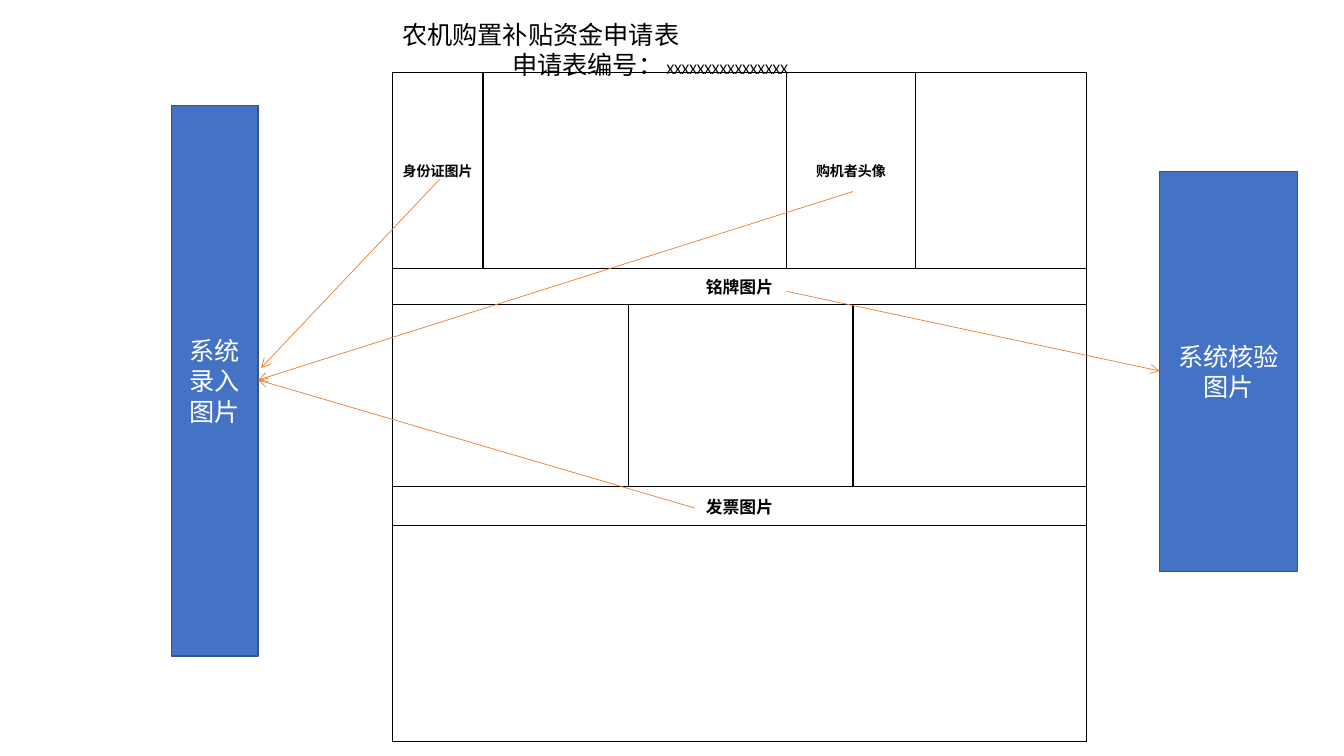
from lxml import etree
from pptx import Presentation
from pptx import util as u
from pptx.dml.color import RGBColor
from pptx.enum import shapes, text
from pptx.oxml.ns import qn

BLACK = RGBColor(0, 0, 0)
WHITE = RGBColor(255, 255, 255)
BLUE = RGBColor(0x44, 0x72, 0xC4)
NAVY = RGBColor(0x32, 0x54, 0x91)
ORANGE = RGBColor(0xED, 0x7D, 0x31)
FONT = "Noto Sans CJK SC"

TITLE_LINES = [
    (0, [("农机购置补贴资金申请表", 18, FONT)]),
    (1.09, [("申请表编号：", 18, FONT), (" XXXXXXXXXXXXXXXX", 10.5, "Calibri")]),
]
TITLE_BOX = (3.89, 0.14, 5.56, 0.58)
FORM_LEFT, FORM_TOP = 3.89, 0.72
COLUMNS = [0.9, 1.44, 1.57, 0.66, 0.62, 1.7]
ROWS = [1.94, 0.36, 1.81, 0.38, 2.15]
FORM_CELLS = [
    [("身份证图片", 1, 10), ("", 2, 10), ("购机者头像", 2, 10), ("", 1, 10)],
    [("铭牌图片", 6, 12)],
    [("", 2, 12), ("", 2, 12), ("", 2, 12)],
    [("发票图片", 6, 12)],
    [("", 6, 12)],
]
PANELS = [
    ("系统录入图片", (1.7, 1.05, 0.86, 5.46)),
    ("系统核验图片", (11.5, 1.7, 1.37, 3.97)),
]
ENTRY_POINT, CHECK_POINT = (2.56, 3.77), (11.5, 3.68)
ARROWS = [
    ((4.36, 1.78), (2.59, 3.65)),
    ((8.46, 1.9), ENTRY_POINT),
    ((6.89, 5.04), ENTRY_POINT),
    ((7.8, 2.89), CHECK_POINT),
]


def inches(values):
    return [u.Inches(v) for v in values]


def style_run(r, size, color, name=FONT, bold=False):
    r.font.size = u.Pt(size)
    r.font.name = name
    r.font.bold = bold
    r.font.color.rgb = color
    etree.SubElement(r._r.get_or_add_rPr(), qn("a:ea")).set("typeface", FONT)


def add_title(slide):
    tf = slide.shapes.add_textbox(*inches(TITLE_BOX)).text_frame
    tf.word_wrap = True
    for i, (indent, runs) in enumerate(TITLE_LINES):
        p = tf.add_paragraph() if i else tf.paragraphs[0]
        p.line_spacing = u.Pt(21.5)
        p._p.get_or_add_pPr().set("marL", str(u.Inches(indent)))
        for words, size, name in runs:
            r = p.add_run()
            r.text = words
            style_run(r, size, BLACK, name)


def add_borders(cell):
    tc_pr = cell._tc.get_or_add_tcPr()
    for i, side in enumerate(("lnL", "lnR", "lnT", "lnB")):
        ln = etree.Element(qn("a:" + side), w=str(u.Pt(1)))
        fill = etree.SubElement(ln, qn("a:solidFill"))
        etree.SubElement(fill, qn("a:srgbClr")).set("val", str(BLACK))
        tc_pr.insert(i, ln)


def add_form(slide):
    box = inches((FORM_LEFT, FORM_TOP, sum(COLUMNS), sum(ROWS)))
    table = slide.shapes.add_table(len(ROWS), len(COLUMNS), *box).table
    table.first_row = table.horz_banding = False
    for column, width in zip(table.columns, COLUMNS):
        column.width = u.Inches(width)
    for row, height in zip(table.rows, ROWS):
        row.height = u.Inches(height)
    for cell in table.iter_cells():
        cell.fill.background()
        add_borders(cell)
    for y, cells in enumerate(FORM_CELLS):
        x = 0
        for words, span, size in cells:
            cell = table.cell(y, x)
            if span > 1:
                cell.merge(table.cell(y, x + span - 1))
            x += span
            cell.margin_left = cell.margin_right = u.Inches(0.07)
            cell.margin_top = cell.margin_bottom = 0
            cell.vertical_anchor = text.MSO_ANCHOR.MIDDLE
            if words:
                p = cell.text_frame.paragraphs[0]
                p.text = words
                p.alignment = text.PP_ALIGN.CENTER
                style_run(p.runs[0], size, BLACK, bold=True)


def add_panel(slide, words, box):
    sp = slide.shapes.add_shape(shapes.MSO_SHAPE.RECTANGLE, *inches(box))
    sp.shadow.inherit = False
    sp.fill.solid()
    sp.fill.fore_color.rgb = BLUE
    sp.line.color.rgb = NAVY
    sp.line.width = u.Pt(1)
    tf = sp.text_frame
    tf.word_wrap = True
    tf.vertical_anchor = text.MSO_ANCHOR.MIDDLE
    p = tf.paragraphs[0]
    p.text = words
    p.alignment = text.PP_ALIGN.CENTER
    p.line_spacing = u.Pt(21.5)
    style_run(p.runs[0], 18, WHITE)


def add_arrow(slide, start, end):
    line = slide.shapes.add_connector(
        shapes.MSO_CONNECTOR.STRAIGHT, *inches(start + end))
    line.line.color.rgb = ORANGE
    line.line.width = u.Pt(0.5)
    etree.SubElement(line.line._get_or_add_ln(), qn("a:tailEnd")).set("type", "arrow")
    etree.SubElement(line._element.spPr, qn("a:effectLst"))


def main():
    prs = Presentation()
    prs.slide_width, prs.slide_height = inches((13.33, 7.5))
    slide = prs.slides.add_slide(prs.slide_layouts[6])
    add_title(slide)
    add_form(slide)
    for words, box in PANELS:
        add_panel(slide, words, box)
    for start, end in ARROWS:
        add_arrow(slide, start, end)
    prs.save("out.pptx")


if __name__ == "__main__":
    main()
